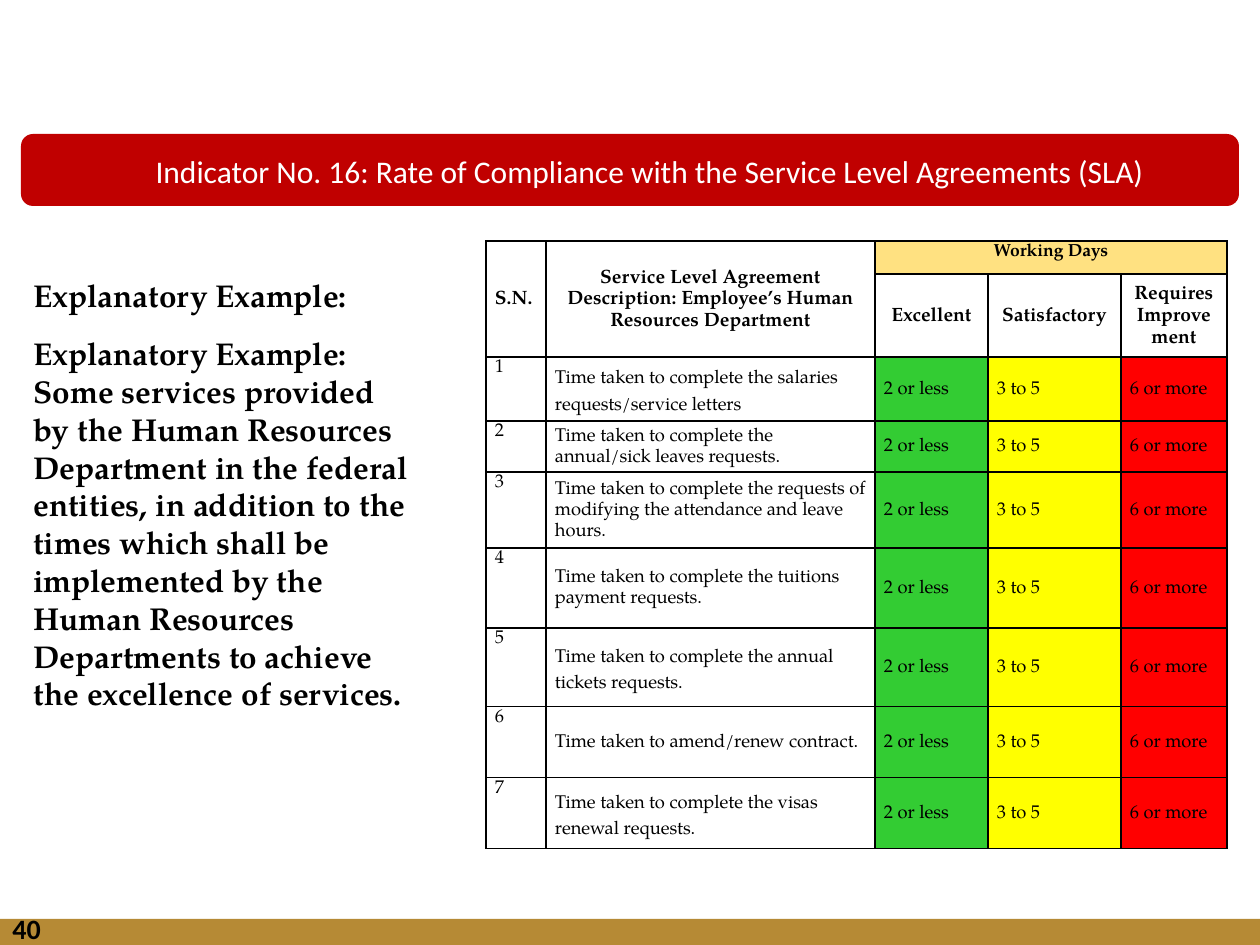
from dataclasses import dataclass
from typing import Any, Optional

import pptx
import pptx.dml.color
import pptx.enum.shapes
import pptx.enum.text
import pptx.oxml
import pptx.oxml.ns
import pptx.util

EMU_PER_PX = 914400 / 126
COLORS = {
    "black": "000000",
    "white": "FFFFFF",
    "gold": "B68A35",
    "banner": "C00000",
    "working_days": "FFE181",
    "excellent": "33CC33",
    "satisfactory": "FFFF00",
    "improve": "FF0000",
}
SANS = "Calibri"
SERIF = "TeX Gyre Pagella"
LEFT = pptx.enum.text.PP_ALIGN.LEFT
CENTER = pptx.enum.text.PP_ALIGN.CENTER
TOP = pptx.enum.text.MSO_ANCHOR.TOP
MIDDLE = pptx.enum.text.MSO_ANCHOR.MIDDLE
SHAPES = pptx.enum.shapes.MSO_SHAPE


@dataclass
class Box:
    left: int
    top: int
    width: int
    height: int

    def emu(self) -> list[int]:
        return [px(value) for value in (self.left, self.top, self.width, self.height)]


@dataclass
class TextStyle:
    size: float
    font: str = SERIF
    bold: bool = False
    color: str = "black"
    align: Any = LEFT


@dataclass
class Cell:
    text: str
    style: TextStyle
    fill: Optional[str] = None
    anchor: Any = MIDDLE
    line_spacing: float = 1.15


@dataclass
class Service:
    description: str
    height: int
    line_spacing: float = 1.15


HEADING = TextStyle(11, bold=True, align=CENTER)
ENTRY = TextStyle(10.5)
COLUMN_WIDTHS = [60, 329, 113, 133, 106]
HEADER_HEIGHTS = [33, 83]
RATINGS = [
    ("2 or less", "excellent"),
    ("3 to 5", "satisfactory"),
    ("6 or more", "improve"),
]
SERVICES = [
    Service("Time taken to complete the salaries requests/service letters", 59, 1.45),
    Service("Time taken to complete the annual/sick leaves requests.", 51),
    Service("Time taken to complete the requests of modifying the attendance and leave hours.", 76),
    Service("Time taken to complete the tuitions payment requests.", 80),
    Service("Time taken to complete the annual tickets requests.", 79, 1.45),
    Service("Time taken to amend/renew contract.", 71),
    Service("Time taken to complete the visas renewal requests.", 71, 1.45),
]
HEADER_CELLS = {
    (0, 0): Cell("S.N.", TextStyle(11, bold=True)),
    (0, 1): Cell("Service Level Agreement Description: Employee’s Human Resources Department", HEADING),
    (0, 2): Cell("Working Days", TextStyle(10, bold=True, align=CENTER), "working_days", TOP),
    (1, 2): Cell("Excellent", HEADING),
    (1, 3): Cell("Satisfactory", HEADING),
    (1, 4): Cell("Requires Improvement", HEADING),
}


def px(value: int) -> int:
    return round(value * EMU_PER_PX)


def rgb(name: str) -> pptx.dml.color.RGBColor:
    return pptx.dml.color.RGBColor.from_string(COLORS[name])


def style_paragraph(paragraph: Any, style: TextStyle) -> None:
    paragraph.alignment = style.align
    for run in paragraph.runs:
        run.font.name = style.font
        run.font.size = pptx.util.Pt(style.size)
        run.font.bold = style.bold
        run.font.color.rgb = rgb(style.color)


def add_panel(slide: Any, kind: Any, box: Box, color: str) -> None:
    shape = slide.shapes.add_shape(kind, *box.emu())
    shape.shadow.inherit = False
    shape.fill.solid()
    shape.fill.fore_color.rgb = rgb(color)
    shape.line.fill.background()


def add_text(slide: Any, box: Box, paragraphs: list[str], style: TextStyle, gap: float = 0) -> None:
    """Add a text box whose paragraphs stand gap points apart."""
    text_frame = slide.shapes.add_textbox(*box.emu()).text_frame
    text_frame.word_wrap = True
    text_frame.text = "\n".join(paragraphs)
    for index, paragraph in enumerate(text_frame.paragraphs):
        style_paragraph(paragraph, style)
        if index:
            paragraph.space_before = pptx.util.Pt(gap)


def set_borders(table_cell: Any) -> None:
    properties = table_cell._tc.get_or_add_tcPr()
    namespace = pptx.oxml.ns.nsdecls("a")
    for index, side in enumerate(("lnL", "lnR", "lnT", "lnB")):
        border = pptx.oxml.parse_xml(
            f'<a:{side} {namespace} w="12700"><a:solidFill>'
            f'<a:srgbClr val="{COLORS["black"]}"/></a:solidFill></a:{side}>'
        )
        properties.insert(index, border)


def fill_cell(table_cell: Any, cell: Cell) -> None:
    table_cell.margin_left = table_cell.margin_right = px(9)
    table_cell.margin_top = table_cell.margin_bottom = 0
    table_cell.vertical_anchor = cell.anchor
    if cell.fill:
        table_cell.fill.solid()
        table_cell.fill.fore_color.rgb = rgb(cell.fill)
    table_cell.text_frame.text = cell.text
    paragraph = table_cell.text_frame.paragraphs[0]
    paragraph.line_spacing = cell.line_spacing
    style_paragraph(paragraph, cell.style)


def add_service_table(slide: Any, left: int, top: int) -> None:
    heights = HEADER_HEIGHTS + [service.height for service in SERVICES]
    box = Box(left, top, sum(COLUMN_WIDTHS), sum(heights))
    table = slide.shapes.add_table(len(heights), len(COLUMN_WIDTHS), *box.emu()).table
    table.first_row = table.horz_banding = False
    for column, width in zip(table.columns, COLUMN_WIDTHS):
        column.width = px(width)
    for row, height in zip(table.rows, heights):
        row.height = px(height)
    for table_cell in table.iter_cells():
        table_cell.fill.background()
        set_borders(table_cell)
    for first, last in (((0, 0), (1, 0)), ((0, 1), (1, 1)), ((0, 2), (0, 4))):
        table.cell(*first).merge(table.cell(*last))

    for position, cell in HEADER_CELLS.items():
        fill_cell(table.cell(*position), cell)
    for number, service in enumerate(SERVICES, start=1):
        cells = [
            Cell(str(number), ENTRY, anchor=TOP),
            Cell(service.description, ENTRY, line_spacing=service.line_spacing),
        ]
        cells += [Cell(days, ENTRY, color) for days, color in RATINGS]
        for column, cell in enumerate(cells):
            fill_cell(table.cell(number + 1, column), cell)


def main() -> None:
    presentation = pptx.Presentation()
    presentation.slide_width, presentation.slide_height = px(1260), px(945)
    slide = presentation.slides.add_slide(presentation.slide_layouts[6])

    add_panel(slide, SHAPES.RECTANGLE, Box(0, 919, 1260, 26), "gold")
    add_panel(slide, SHAPES.ROUNDED_RECTANGLE, Box(21, 134, 1218, 72), "banner")
    title = "Indicator No. 16: Rate of Compliance with the Service Level Agreements (SLA)"
    add_text(slide, Box(133, 146, 1034, 94), [title], TextStyle(18, SANS, color="white", align=CENTER))
    add_text(slide, Box(0, 905, 294, 50), ["40"], TextStyle(16, SANS, bold=True))
    example = [
        "Explanatory Example:",
        "Explanatory Example: Some services provided by the Human Resources Department "
        "in the federal entities, in addition to the times which shall be implemented by "
        "the Human Resources Departments to achieve the excellence of services.",
    ]
    add_text(slide, Box(21, 270, 402, 454), example, TextStyle(18, bold=True), gap=11.6)
    add_service_table(slide, 486, 241)

    presentation.save("out.pptx")


if __name__ == "__main__":
    main()
